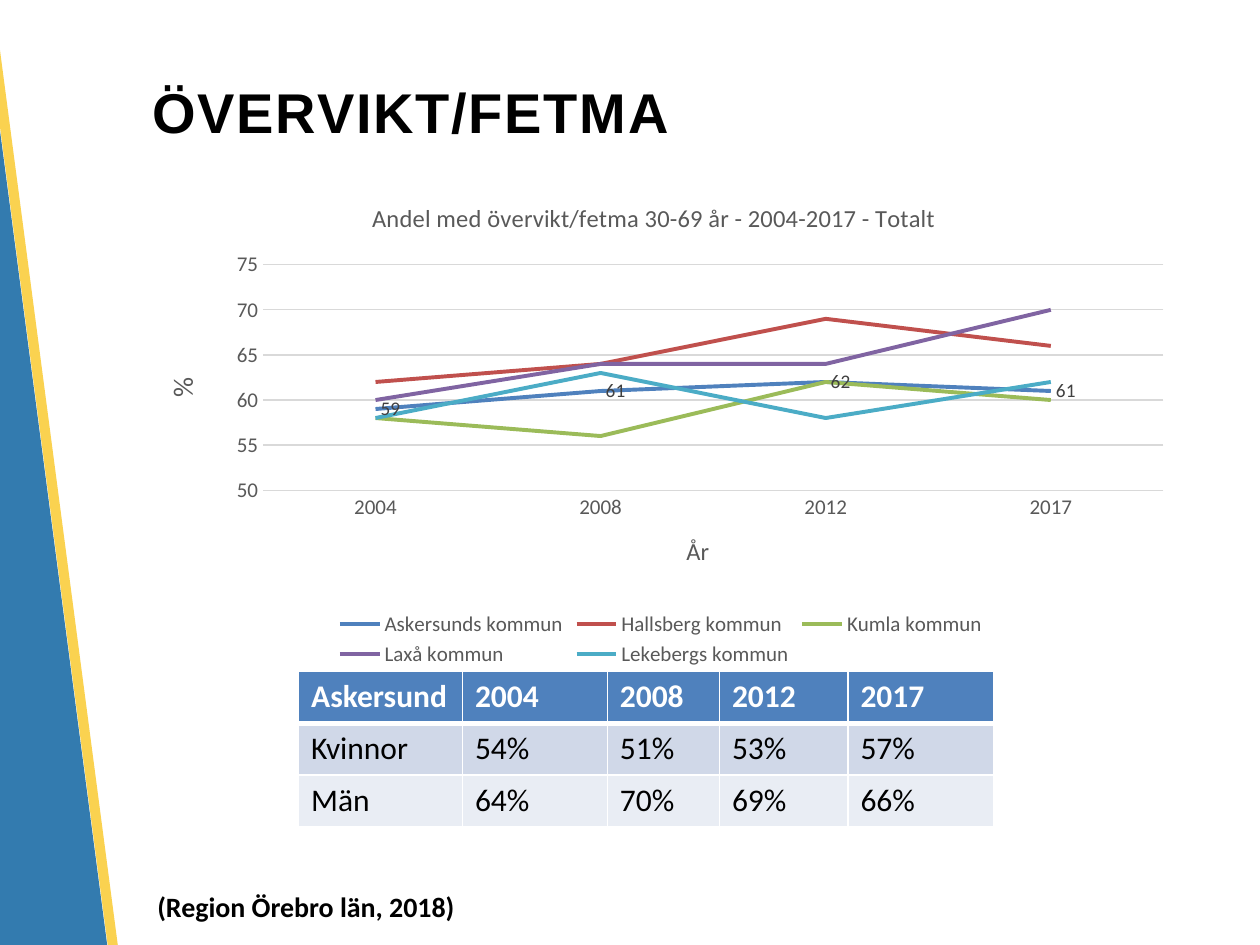
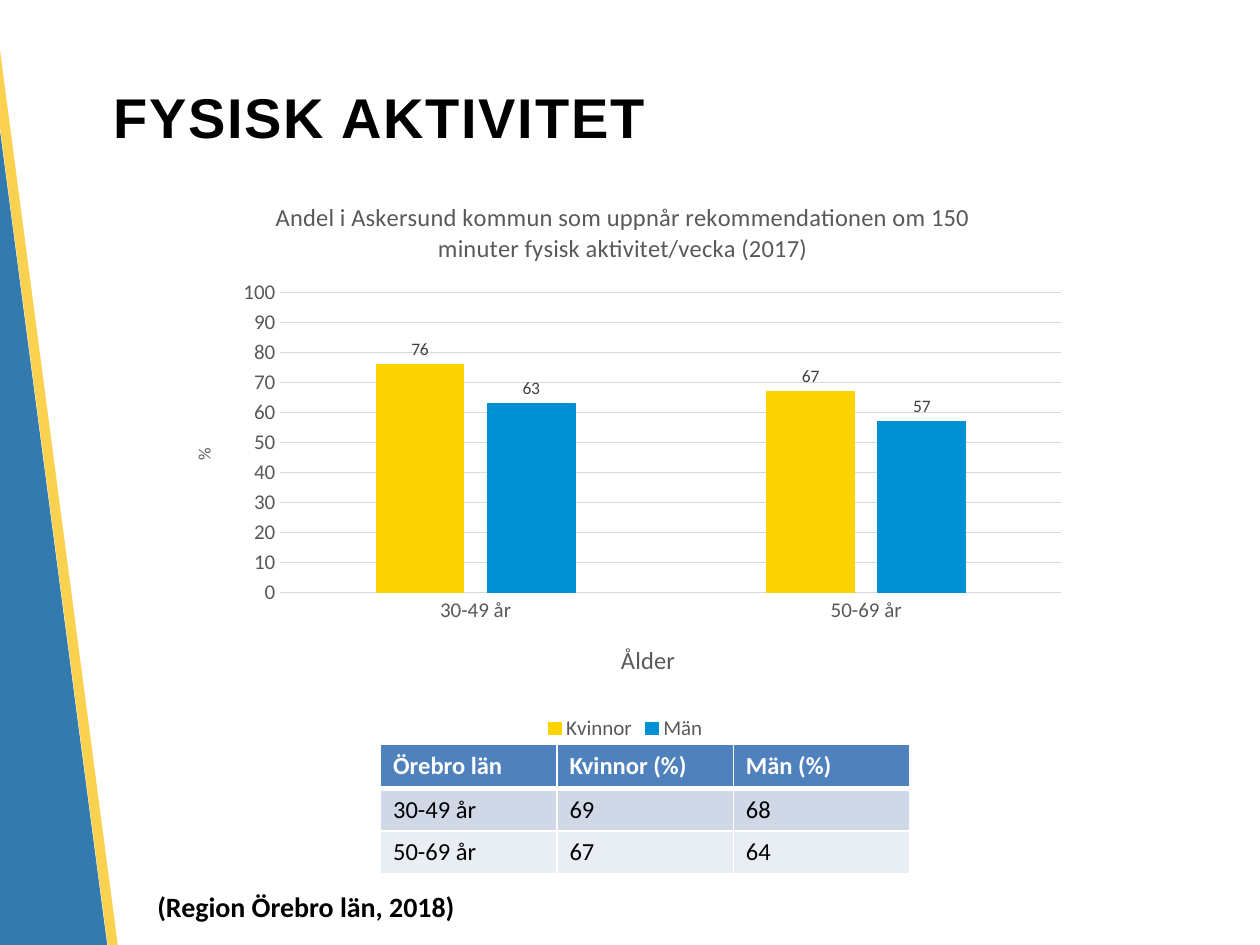
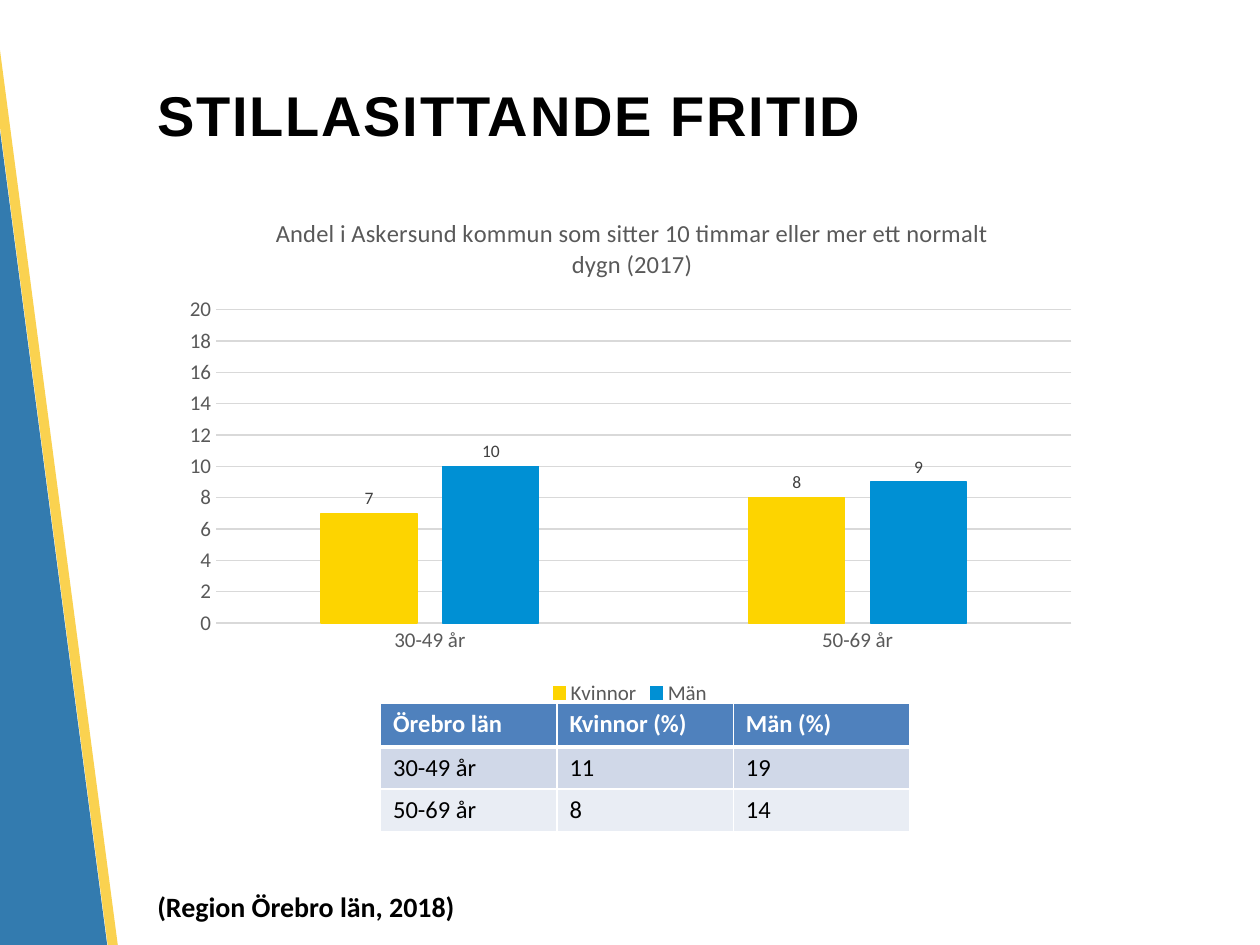
import pptx
import pptx.chart.data
import pptx.dml.color
import pptx.enum.chart
import pptx.enum.shapes
import pptx.enum.text
import pptx.oxml
import pptx.oxml.ns
import pptx.util
from pptx.util import Inches

COLORS = {
    "blue_band": "005B9C", "yellow_band": "FAC828", "black": "000000", "white": "FFFFFF",
    "header": "4F81BD", "odd_row": "D0D8E8", "even_row": "E9EDF4",
    "axis": "595959", "grid": "D9D9D9", "label": "404040",
    "women": "FDD400", "men": "0090D4",
    "askersund": "4F81BD", "hallsberg": "C0504D", "kumla": "9BBB59",
    "laxa": "8064A2", "lekeberg": "4BACC6",
}
qn = pptx.oxml.ns.qn
Pt = pptx.util.Pt
XL = pptx.enum.chart
SOURCE = "(Region Örebro län, 2018)"
AGES = ["30-49 år", "50-69 år"]


def rgb(name):
    return pptx.dml.color.RGBColor.from_string(COLORS[name])


def style_font(font, size, color, bold=False, name="Calibri"):
    font.size = Pt(size)
    font.bold = bold
    font.name = name
    font.color.rgb = rgb(color)


def write_text(tf, text, size=14, color="black", bold=False, font="Calibri", spacing=None):
    p = tf.paragraphs[0]
    r = p.add_run()
    r.text = text
    style_font(r.font, size, color, bold, font)
    if spacing:
        r.font._element.set("spc", str(spacing * 100))
    return p


def place(parent, x, y, w=None, h=None):
    old = parent.find(qn("c:layout"))
    if old is not None:
        parent.remove(old)
    inner = '<c:layoutTarget val="inner"/>' if w else ""
    modes = '<c:xMode val="edge"/><c:yMode val="edge"/>'
    box = "".join(f'<c:{k} val="{v}"/>' for k, v in zip("xywh", (x, y, w, h)) if v is not None)
    layout = pptx.oxml.parse_xml(
        f'<c:layout {pptx.oxml.ns.nsdecls("c")}><c:manualLayout>'
        f'{inner}{modes}{box}</c:manualLayout></c:layout>')
    parent.insert(0 if parent.find(qn("c:tx")) is None else 1, layout)


class Deck:
    def __init__(self):
        self.prs = pptx.Presentation()
        self.prs.slide_width = Inches(10)
        self.prs.slide_height = Inches(7.5)
        self.s = None

    def slide(self, title, left, top):
        self.s = self.prs.slides.add_slide(self.prs.slide_layouts[5])
        self.band(-0.52, -1.64, 0.91, 11.33, "blue_band", 80)
        self.band(0.38, -1.77, 0.08, 11.32, "yellow_band", 81)
        sp = self.s.shapes.title
        sp.left, sp.top, sp.width, sp.height = map(Inches, (left, top, 8.65, 1.25))
        tf = sp.text_frame
        tf.auto_size = pptx.enum.text.MSO_AUTO_SIZE.NONE
        tf.vertical_anchor = pptx.enum.text.MSO_ANCHOR.MIDDLE
        p = write_text(tf, title, size=32, bold=True, font="Arial", spacing=1)
        p.alignment = pptx.enum.text.PP_ALIGN.LEFT

    def band(self, left, top, width, height, color, opacity):
        sp = self.s.shapes.add_shape(pptx.enum.shapes.MSO_SHAPE.RECTANGLE,
                                     *map(Inches, (left, top, width, height)))
        sp.rotation = 352.5
        sp.shadow.inherit = False
        sp.line.fill.background()
        sp.fill.solid()
        sp.fill.fore_color.rgb = rgb(color)
        clr = sp.element.spPr.find(".//" + qn("a:srgbClr"))
        clr.append(pptx.oxml.parse_xml(
            f'<a:alpha {pptx.oxml.ns.nsdecls("a")} val="{opacity * 1000}"/>'))

    def source(self):
        sp = self.s.shapes.add_textbox(*map(Inches, (1.15, 7.01, 2.72, 0.37)))
        tf = sp.text_frame
        tf.word_wrap = True
        tf.auto_size = pptx.enum.text.MSO_AUTO_SIZE.SHAPE_TO_FIT_TEXT
        write_text(tf, SOURCE, size=16, bold=True)

    def table(self, left, top, cols, row_heights, rows, size):
        frame = self.s.shapes.add_table(
            len(rows), len(cols), Inches(left), Inches(top),
            Inches(sum(cols)), Inches(sum(row_heights)))
        tbl = frame.table
        for col, width in zip(tbl.columns, cols):
            col.width = Inches(width)
        for i, (row, height) in enumerate(zip(rows, row_heights)):
            tbl.rows[i].height = Inches(height)
            fill = ("header", "odd_row", "even_row")[i]
            for j, text in enumerate(row):
                cell = tbl.cell(i, j)
                cell.fill.solid()
                cell.fill.fore_color.rgb = rgb(fill)
                write_text(cell.text_frame, text, size=size, bold=i == 0,
                           color="black" if i else "white")
                self.borders(cell, top=3 if i == 1 else 1, bottom=1 if i else 3)

    def borders(self, cell, top, bottom):
        pr = cell._tc.get_or_add_tcPr()
        for k, (side, width) in enumerate((("L", 1), ("R", 1), ("T", top), ("B", bottom))):
            pr.insert(k, pptx.oxml.parse_xml(
                f'<a:ln{side} {pptx.oxml.ns.nsdecls("a")} w="{Pt(width)}"><a:solidFill>'
                f'<a:srgbClr val="{COLORS["white"]}"/></a:solidFill></a:ln{side}>'))

    def chart(self, kind, box, title, title_at, plot_at, cats, series, font_size):
        data = pptx.chart.data.CategoryChartData()
        data.categories = cats
        for name, values, _ in series:
            data.add_series(name, values)
        chart = self.s.shapes.add_chart(kind, *map(Inches, box), data).chart
        style_font(chart.font, font_size, "black")
        chart.has_title = True
        write_text(chart.chart_title.text_frame, title, color="axis")
        place(chart.chart_title.element, *title_at)
        place(chart.element.find(".//" + qn("c:plotArea")), *plot_at)
        chart.has_legend = True
        chart.legend.position = XL.XL_LEGEND_POSITION.BOTTOM
        chart.legend.include_in_layout = False
        style_font(chart.legend.font, 12, "axis")
        for axis in (chart.category_axis, chart.value_axis):
            axis.major_tick_mark = axis.minor_tick_mark = XL.XL_TICK_MARK.NONE
            style_font(axis.tick_labels.font, 12, "axis")
        grid = chart.value_axis.major_gridlines.format.line
        for line in (chart.category_axis.format.line, grid):
            line.color.rgb = rgb("grid")
            line.width = Pt(0.75)
        chart.value_axis.format.line.fill.background()
        return chart

    def scale(self, chart, low, high, step):
        axis = chart.value_axis
        axis.minimum_scale, axis.maximum_scale, axis.major_unit = low, high, step
        axis.tick_labels.number_format = "0"
        axis.tick_labels.number_format_is_linked = False

    def axis_title(self, axis, text, size, at, rotated=False):
        axis.has_title = True
        write_text(axis.axis_title.text_frame, text, size=size, color="axis")
        element = axis.axis_title.element
        if rotated:
            element.find(".//" + qn("a:bodyPr")).set("rot", "-5400000")
        place(element, *at)

    def value_labels(self, ser, size, position):
        labels = ser.data_labels
        labels.show_value = True
        labels.position = position
        style_font(labels.font, size, "label")

    def lines(self, box, title, title_at, plot_at, cats, series):
        chart = self.chart(XL.XL_CHART_TYPE.LINE, box, title, title_at, plot_at,
                           cats, series, 16)
        for ser, (_, _, color) in zip(chart.plots[0].series, series):
            ser.smooth = False
            ser.marker.style = XL.XL_MARKER_STYLE.NONE
            ser.format.line.color.rgb = rgb(color)
            ser.format.line.width = Pt(2.25)
        self.value_labels(chart.plots[0].series[0], 11, XL.XL_LABEL_POSITION.RIGHT)
        return chart

    def columns(self, box, title, title_at, plot_at, women, men):
        series = [("Kvinnor", women, "women"), ("Män", men, "men")]
        chart = self.chart(XL.XL_CHART_TYPE.COLUMN_CLUSTERED, box, title, title_at,
                           plot_at, AGES, series, 10)
        plot = chart.plots[0]
        plot.vary_by_categories = False
        plot.gap_width = 219
        plot.overlap = -27
        for ser, (_, _, color) in zip(plot.series, series):
            ser.format.fill.solid()
            ser.format.fill.fore_color.rgb = rgb(color)
            ser.format.line.color.rgb = rgb(color)
            ser.format.line.width = Pt(0.75)
            self.value_labels(ser, 10, XL.XL_LABEL_POSITION.OUTSIDE_END)
        return chart

    def county_table(self, top, women, men):
        rows = [["Örebro län", "Kvinnor (%)", "Män (%)"], *zip(AGES, women, men)]
        self.table(3.02, top, [1.4] * 3, [0.35, 0.33, 0.33], rows, 14)


def overweight_slide(deck):
    deck.slide("ÖVERVIKT/FETMA", 1.11, 0.26)
    years = ["2004", "2008", "2012", "2017"]
    deck.table(2.37, 5.33, [1.3, 1.15, 0.89, 1.02, 1.16], [0.41] * 3, [
        ["Askersund", *years],
        ["Kvinnor", "54%", "51%", "53%", "57%"],
        ["Män", "64%", "70%", "69%", "66%"],
    ], 18)
    chart = deck.lines(
        (1.09, 1.44, 8.31, 3.89), "Andel med övervikt/fetma 30-69 år - 2004-2017 - Totalt",
        (0.22, 0.03), (0.12, 0.17, 0.86, 0.46), years, [
            ("Askersunds kommun", [59, 61, 62, 61], "askersund"),
            ("Hallsberg kommun", [62, 64, 69, 66], "hallsberg"),
            ("Kumla kommun", [58, 56, 62, 60], "kumla"),
            ("Laxå kommun", [60, 64, 64, 70], "laxa"),
            ("Lekebergs kommun", [58, 63, 58, 62], "lekeberg"),
        ])
    deck.scale(chart, 50, 75, 5)
    deck.axis_title(chart.category_axis, "År", 14, (0.52, 0.71))
    deck.axis_title(chart.value_axis, "%", 16, (0.02, 0.39), rotated=True)
    deck.source()


def activity_slide(deck):
    deck.slide("FYSISK AKTIVITET", 0.8, 0.3)
    deck.county_table(5.91, ["69", "67"], ["68", "64"])
    deck.source()
    chart = deck.columns(
        (1.36, 1.42, 7.21, 4.5),
        "Andel i Askersund kommun som uppnår rekommendationen om 150 minuter "
        "fysisk aktivitet/vecka (2017)",
        (0.11, 0.03), (0.12, 0.2, 0.86, 0.53), [76, 67], [63, 57])
    deck.scale(chart, 0, 100, 10)
    deck.axis_title(chart.category_axis, "Ålder", 14, (0.49, 0.81))
    deck.axis_title(chart.value_axis, "%", 10, (0.02, 0.47), rotated=True)


def sitting_slide(deck):
    deck.slide("STILLASITTANDE FRITID", 1.15, 0.28)
    deck.source()
    deck.county_table(5.58, ["11", "8"], ["19", "14"])
    chart = deck.columns(
        (1.35, 1.56, 7.3, 4.08),
        "Andel i Askersund kommun som sitter 10 timmar eller mer ett normalt dygn (2017)",
        (0.11, 0.03), (0.05, 0.22, 0.93, 0.61), [7, 8], [10, 9])
    deck.scale(chart, 0, 20, 2)


def main():
    deck = Deck()
    overweight_slide(deck)
    activity_slide(deck)
    sitting_slide(deck)
    deck.prs.save("out.pptx")


if __name__ == "__main__":
    main()
